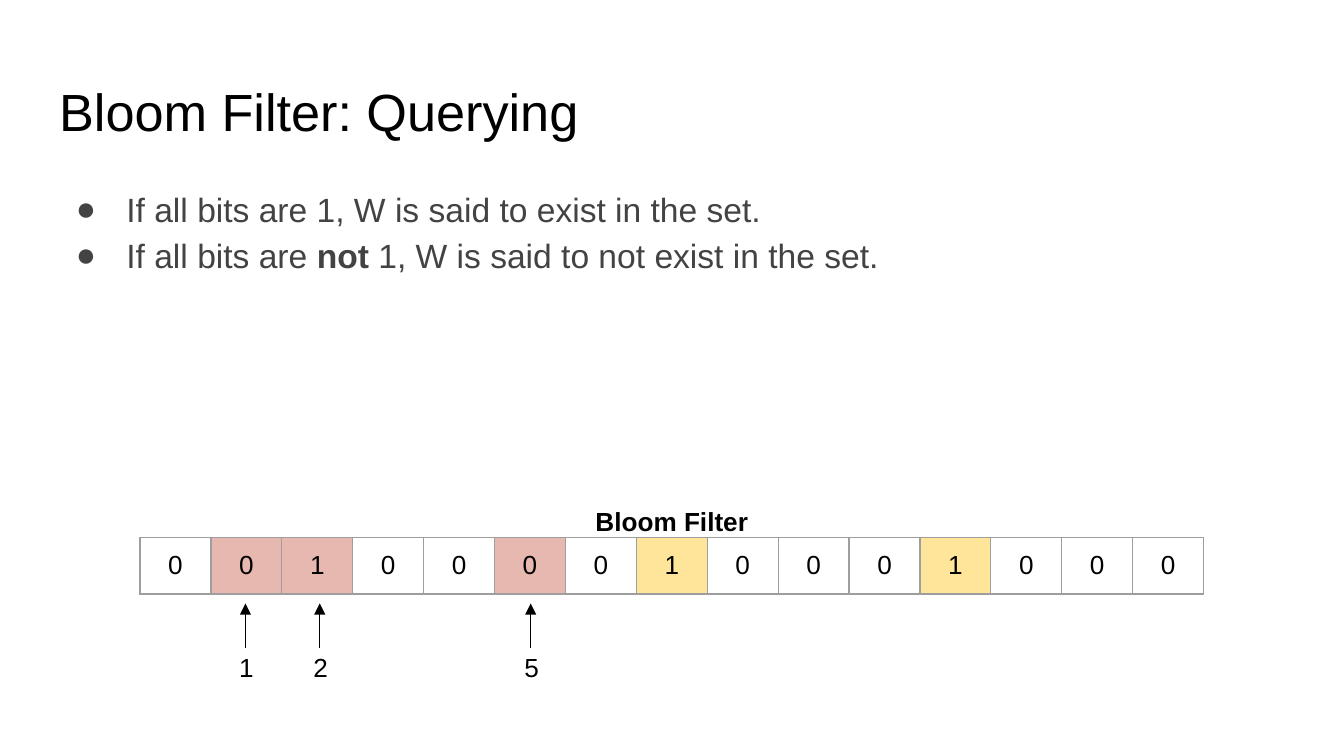
from dataclasses import dataclass

from lxml import etree
from pptx import Presentation
from pptx import util as u
from pptx.dml.color import RGBColor
from pptx.enum import shapes, text
from pptx.oxml import ns


@dataclass(frozen=True)
class Theme:
    font: str = "Arial"
    ink: str = "000000"
    grey: str = "434343"
    edge: str = "9E9E9E"
    query: str = "E6B8AF"
    stored: str = "FFE599"
    head: float = 28
    body: float = 18
    small: float = 14
    line: float = 0.75
    inset: float = 7.2


@dataclass(frozen=True)
class Box:
    x: float
    y: float
    w: float
    h: float


@dataclass(frozen=True)
class Run:
    words: str
    bold: bool = False


@dataclass(frozen=True)
class Probe:
    """A queried bit and the centre of its arrow and label."""
    bit: int
    x: float


THEME = Theme()
BITS = "001000010001000"
STORED = {7, 11}
PROBES = [Probe(1, 131.5), Probe(2, 171.3), Probe(5, 284.3)]
POINTS = [
    [Run("If all bits are 1, W is said to exist in the set.")],
    [Run("If all bits are "), Run("not", True),
     Run(" 1, W is said to not exist in the set.")],
]
GRID = Box(75, 288, 38, 30.2)  # first cell


def add_sub(node, tag: str, **attrs: str):
    return etree.SubElement(node, ns.qn(tag), attrs)


def add_run(para, run: Run, size: float, color: str) -> None:
    part = para.add_run()
    part.text = run.words
    font = part.font
    font.name, font.size, font.bold = THEME.font, u.Pt(size), run.bold
    font.color.rgb = RGBColor.from_string(color)


def place(shape, box: Box):
    """Move a shape, set up its text frame and return the frame."""
    shape.left, shape.top = u.Pt(box.x), u.Pt(box.y)
    shape.width, shape.height = u.Pt(box.w), u.Pt(box.h)
    frame = shape.text_frame
    frame.word_wrap = True
    frame.auto_size = text.MSO_AUTO_SIZE.NONE
    frame.vertical_anchor = text.MSO_ANCHOR.TOP
    frame.margin_left = frame.margin_right = u.Pt(THEME.inset)
    frame.margin_top = frame.margin_bottom = u.Pt(THEME.inset)
    return frame


def add_label(slide, box: Box, run: Run) -> None:
    frame = place(slide.shapes.add_textbox(0, 0, 0, 0), box)
    para = frame.paragraphs[0]
    para.alignment = text.PP_ALIGN.CENTER
    add_run(para, run, THEME.small, THEME.ink)


def add_title(slide) -> None:
    frame = place(slide.shapes.title, Box(24.5, 35.3, 671, 45.4))
    para = frame.paragraphs[0]
    para.alignment = text.PP_ALIGN.LEFT
    add_run(para, Run("Bloom Filter: Querying"), THEME.head, THEME.ink)


def add_list(slide) -> None:
    frame = place(slide.placeholders[1], Box(24.5, 90.7, 671, 118))
    for i, runs in enumerate(POINTS):
        para = frame.add_paragraph() if i else frame.paragraphs[0]
        para.line_spacing = 1.15
        para.space_before = para.space_after = u.Pt(0)
        props = para._p.get_or_add_pPr()
        props.set("marL", str(u.Pt(36)))
        props.set("indent", str(u.Pt(-27)))
        add_sub(add_sub(props, "a:buClr"), "a:srgbClr", val=THEME.grey)
        add_sub(props, "a:buFont", typeface=THEME.font)
        add_sub(props, "a:buChar", char="●")
        for run in runs:
            add_run(para, run, THEME.body, THEME.grey)


def add_edges(cell) -> None:
    props = cell._tc.get_or_add_tcPr()
    for side in "LRTB":
        line = add_sub(props, f"a:ln{side}", w=str(u.Pt(THEME.line)))
        add_sub(add_sub(line, "a:solidFill"), "a:srgbClr", val=THEME.edge)


def add_bits(slide) -> None:
    size = len(BITS)
    table = slide.shapes.add_table(
        1, size, u.Pt(GRID.x), u.Pt(GRID.y),
        u.Pt(GRID.w * size), u.Pt(GRID.h)).table
    table.first_row = table.horz_banding = False
    fills = dict.fromkeys(STORED, THEME.stored)
    fills.update((probe.bit, THEME.query) for probe in PROBES)
    for i, bit in enumerate(BITS):
        table.columns[i].width = u.Pt(GRID.w)
        cell = table.cell(0, i)
        cell.margin_left = cell.margin_right = u.Pt(THEME.inset)
        cell.margin_top = cell.margin_bottom = u.Pt(THEME.inset)
        add_edges(cell)
        if i in fills:
            cell.fill.solid()
            cell.fill.fore_color.rgb = RGBColor.from_string(fills[i])
        else:
            cell.fill.background()
        para = cell.text_frame.paragraphs[0]
        para.alignment = text.PP_ALIGN.CENTER
        add_run(para, Run(bit), THEME.small, THEME.ink)


def add_probe(slide, probe: Probe) -> None:
    x = u.Pt(probe.x)
    arrow = slide.shapes.add_connector(
        shapes.MSO_CONNECTOR.STRAIGHT, x, u.Pt(347), x, u.Pt(323.3))
    arrow.line.width = u.Pt(THEME.line)
    arrow.line.color.rgb = RGBColor.from_string(THEME.ink)
    add_sub(arrow.line._get_or_add_ln(), "a:tailEnd", type="triangle")
    add_sub(arrow._element.spPr, "a:effectLst")
    add_label(slide, Box(probe.x - 10.5, 342, 21, 27.4), Run(str(probe.bit)))


def main() -> None:
    deck = Presentation()
    deck.slide_width, deck.slide_height = u.Pt(720), u.Pt(405)
    slide = deck.slides.add_slide(deck.slide_layouts[1])
    add_title(slide)
    add_list(slide)
    add_bits(slide)
    add_label(slide, Box(296.6, 263.5, 126.7, 31), Run("Bloom Filter", True))
    for probe in PROBES:
        add_probe(slide, probe)
    deck.save("out.pptx")


if __name__ == "__main__":
    main()
